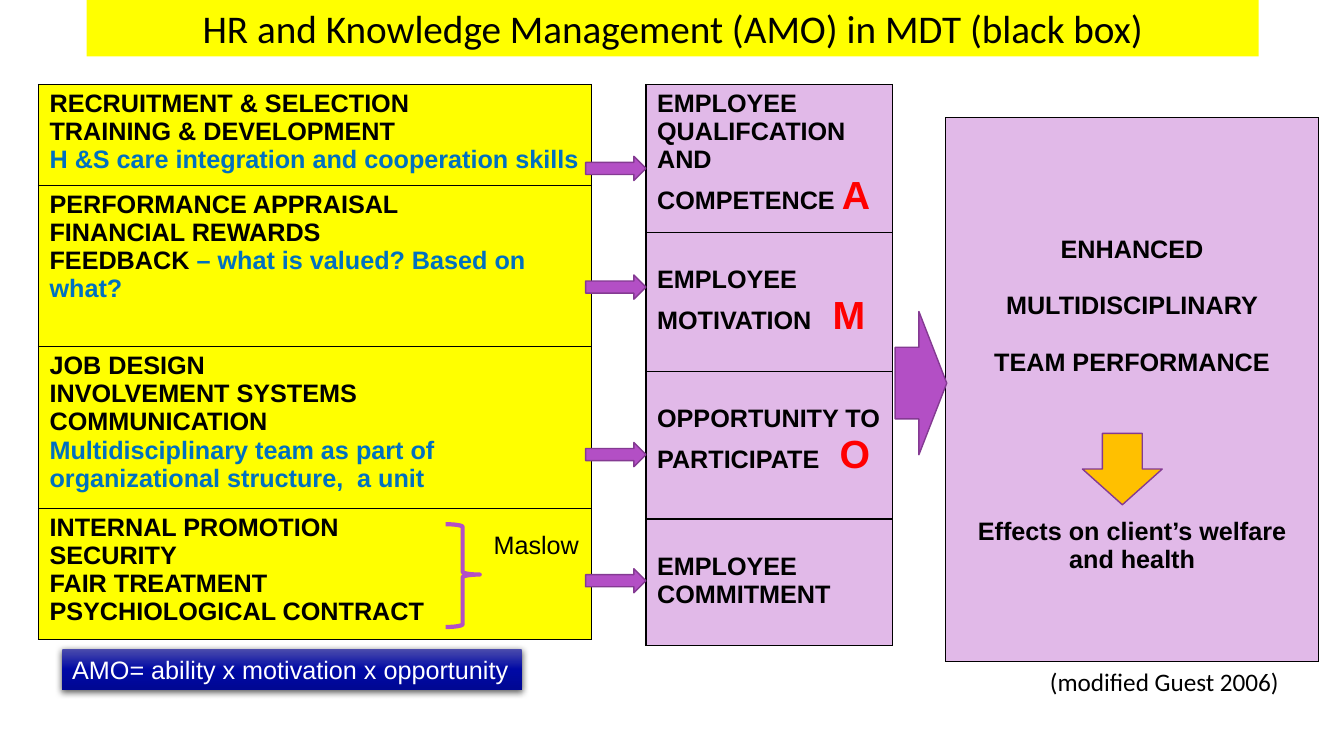
from dataclasses import dataclass

from lxml.etree import SubElement
from pptx import Presentation
from pptx.dml.color import RGBColor
from pptx.enum.shapes import MSO_SHAPE as Shape
from pptx.enum.text import MSO_ANCHOR as Anchor, MSO_AUTO_SIZE as Fit, PP_ALIGN as Align
from pptx.oxml.ns import qn
from pptx.util import Cm, Pt

BLACK = RGBColor(0x00, 0x00, 0x00)
WHITE = RGBColor(0xFF, 0xFF, 0xFF)
YELLOW = RGBColor(0xFF, 0xFF, 0x00)
BLUE = RGBColor(0x00, 0x70, 0xC0)
RED = RGBColor(0xFF, 0x00, 0x00)
LILAC = RGBColor(0xE1, 0xB9, 0xE8)
PURPLE = RGBColor(0xB3, 0x4F, 0xC5)
PLUM = RGBColor(0x84, 0x3A, 0x92)
GOLD = RGBColor(0xFF, 0xC0, 0x00)
NAVY = ((0, "4B4CAC"), (50, "0009A5"), (100, "000893"))


@dataclass(frozen=True)
class Box:
    left: float
    top: float
    width: float
    height: float

    def lengths(self) -> tuple:
        return Cm(self.left), Cm(self.top), Cm(self.width), Cm(self.height)


@dataclass(frozen=True)
class Run:
    text: str
    color: RGBColor = BLACK
    size: float = 18


@dataclass(frozen=True)
class Line:
    runs: tuple
    before: float = 0
    tab: float = 0


@dataclass(frozen=True)
class Row:
    height: float
    lines: tuple
    inset: float = 0.13


@dataclass(frozen=True)
class Grid:
    left: float
    top: float
    width: float
    fill: RGBColor
    rows: tuple
    align: Align = Align.LEFT


@dataclass(frozen=True)
class Mark:
    kind: Shape
    box: Box
    fill: RGBColor | None = PURPLE
    line: RGBColor = PLUM
    weight: float = 1
    adjust: tuple = ()


def plain(*texts: str) -> tuple:
    return tuple(Line((Run(text),)) for text in texts)


def write(frame, lines: tuple, *, font: str = "Arial", bold: bool = False,
          align: Align = Align.LEFT, wrap: bool = True) -> None:
    frame.word_wrap = wrap
    for i, line in enumerate(lines):
        para = frame.paragraphs[0] if i == 0 else frame.add_paragraph()
        para.alignment = align
        if line.before:
            para.space_before = Pt(line.before)
        if line.tab:
            tabs = SubElement(para._p.get_or_add_pPr(), qn("a:tabLst"))
            SubElement(tabs, qn("a:tab"), pos=str(Cm(line.tab)), algn="l")
        for part in line.runs:
            run = para.add_run()
            run.text = part.text
            run.font.name = font
            run.font.size = Pt(part.size)
            run.font.bold = bold
            run.font.color.rgb = part.color


def border(cell) -> None:
    props = cell._tc.get_or_add_tcPr()
    for side in "LRTB":
        edge = SubElement(props, qn(f"a:ln{side}"), w=str(Pt(1)))
        SubElement(SubElement(edge, qn("a:solidFill")), qn("a:srgbClr"), val=str(BLACK))


def draw_grid(slide, grid: Grid) -> None:
    total = sum(row.height for row in grid.rows)
    box = Box(grid.left, grid.top, grid.width, total)
    table = slide.shapes.add_table(len(grid.rows), 1, *box.lengths()).table
    table.first_row = table.horz_banding = False
    for i, row in enumerate(grid.rows):
        table.rows[i].height = Cm(row.height)
        cell = table.cell(i, 0)
        border(cell)
        cell.fill.solid()
        cell.fill.fore_color.rgb = grid.fill
        cell.margin_left = cell.margin_right = Cm(0.28)
        cell.margin_top, cell.margin_bottom = Cm(row.inset), Cm(0.13)
        write(cell.text_frame, row.lines, bold=True, align=grid.align)


def draw_mark(slide, mark: Mark) -> None:
    shape = slide.shapes.add_shape(mark.kind, *mark.box.lengths())
    shape.shadow.inherit = False
    for i, value in enumerate(mark.adjust):
        shape.adjustments[i] = value
    if mark.fill is None:
        shape.fill.background()
    else:
        shape.fill.solid()
        shape.fill.fore_color.rgb = mark.fill
    shape.line.color.rgb = mark.line
    shape.line.width = Pt(mark.weight)


def draw_note(slide, box: Box, run: Run, font: str = "Arial", wrap: bool = True) -> None:
    note = slide.shapes.add_textbox(*box.lengths())
    write(note.text_frame, (Line((run,)),), font=font, wrap=wrap)


def draw_sum(slide, box: Box, run: Run) -> None:
    shape = slide.shapes.add_shape(Shape.RECTANGLE, *box.lengths())
    shape.shadow.inherit = False
    shape.line.fill.background()
    shape.fill.gradient()
    shape.fill.gradient_angle = 270
    props = shape._element.spPr
    stops = props.find(".//" + qn("a:gsLst"))
    for stop in list(stops):
        stops.remove(stop)
    for place, color in NAVY:
        stop = SubElement(stops, qn("a:gs"), pos=str(place * 1000))
        SubElement(stop, qn("a:srgbClr"), val=color)
    shade = SubElement(props.find(qn("a:effectLst")), qn("a:outerShdw"), blurRad=str(Pt(4.5)),
                       dist=str(Pt(1.5)), dir="5400000", algn="ctr", rotWithShape="0")
    tint = SubElement(shade, qn("a:srgbClr"), val=str(BLACK))
    SubElement(tint, qn("a:alpha"), val="63000")
    write(shape.text_frame, (Line((run,)),))


def draw_title(slide, box: Box, run: Run) -> None:
    title = slide.shapes.title
    title.left, title.top, title.width, title.height = box.lengths()
    title.fill.solid()
    title.fill.fore_color.rgb = YELLOW
    title.text_frame.auto_size = Fit.NONE
    title.text_frame.vertical_anchor = Anchor.MIDDLE
    write(title.text_frame, (Line((run,)),), font="Calibri", align=Align.CENTER)


INPUTS = Grid(0.97, 2.13, 13.94, YELLOW, (
    Row(2.54, plain("RECRUITMENT & SELECTION", "TRAINING & DEVELOPMENT")
        + (Line((Run("H &S care integration and cooperation skills", BLUE),)),)),
    Row(4.06, plain("PERFORMANCE APPRAISAL", "FINANCIAL REWARDS")
        + (Line((Run("FEEDBACK "), Run("– what is valued? Based on what?", BLUE))),)),
    Row(4.08, plain("JOB DESIGN", "INVOLVEMENT SYSTEMS COMMUNICATION")
        + (Line((Run("Multidisciplinary team as part of organizational structure,  a unit", BLUE),)),)),
    Row(3.3, plain("INTERNAL PROMOTION", "SECURITY", "FAIR TREATMENT", "PSYCHIOLOGICAL CONTRACT")),
))
DRIVERS = Grid(16.28, 2.13, 6.22, LILAC, (
    Row(3.73, (Line((Run("EMPLOYEE QUALIFCATION AND COMPETENCE "), Run("A", RED, 28))),)),
    Row(3.5, (Line((Run("EMPLOYEE MOTIVATION\t"), Run("M", RED, 28)), tab=4.42),), 0.84),
    Row(3.72, (Line((Run("OPPORTUNITY TO PARTICIPATE\t"), Run("O", RED, 28)), tab=4.6),), 0.84),
    Row(3.18, plain("EMPLOYEE COMMITMENT"), 0.84),
))
RESULT = Grid(23.83, 2.97, 9.4, LILAC, (
    Row(13.69, (
        Line((Run("ENHANCED"),)),
        Line((Run("MULTIDISCIPLINARY"),), 20),
        Line((Run("TEAM PERFORMANCE"),), 20),
        Line((Run("Effects on client’s welfare and health"),), 101),
    ), 2.97),
), Align.CENTER)
MARKS = (
    Mark(Shape.RIGHT_ARROW, Box(22.56, 7.85, 1.3, 3.61), adjust=(0.5, 0.54)),
    *(Mark(Shape.RIGHT_ARROW, Box(14.76, top, 1.52, 0.61)) for top in (3.94, 6.93, 11.15, 14.33)),
    Mark(Shape.DOWN_ARROW, Box(27.28, 10.92, 2.01, 1.8), GOLD),
    Mark(Shape.RIGHT_BRACE, Box(11.23, 13.21, 0.86, 2.59), None, PURPLE, 3, (0.08, 0.49)),
)


def main() -> None:
    deck = Presentation()
    deck.slide_width, deck.slide_height = Cm(33.87), Cm(19.05)
    slide = deck.slides.add_slide(deck.slide_layouts[5])
    draw_title(slide, Box(2.18, -0.03, 29.54, 1.45),
               Run("HR and Knowledge Management (AMO) in MDT (black box)", size=28))
    for grid in (INPUTS, DRIVERS, RESULT):
        draw_grid(slide, grid)
    for mark in MARKS:
        draw_mark(slide, mark)
    draw_note(slide, Box(26.21, 16.66, 6.35, 1.02), Run("(modified Guest 2006)"), "Calibri", False)
    draw_note(slide, Box(12.19, 13.21, 2.82, 1.02), Run("Maslow"))
    draw_sum(slide, Box(1.57, 16.36, 11.58, 1.02),
             Run("AMO= ability x motivation x opportunity", WHITE))
    deck.save("out.pptx")


if __name__ == "__main__":
    main()
